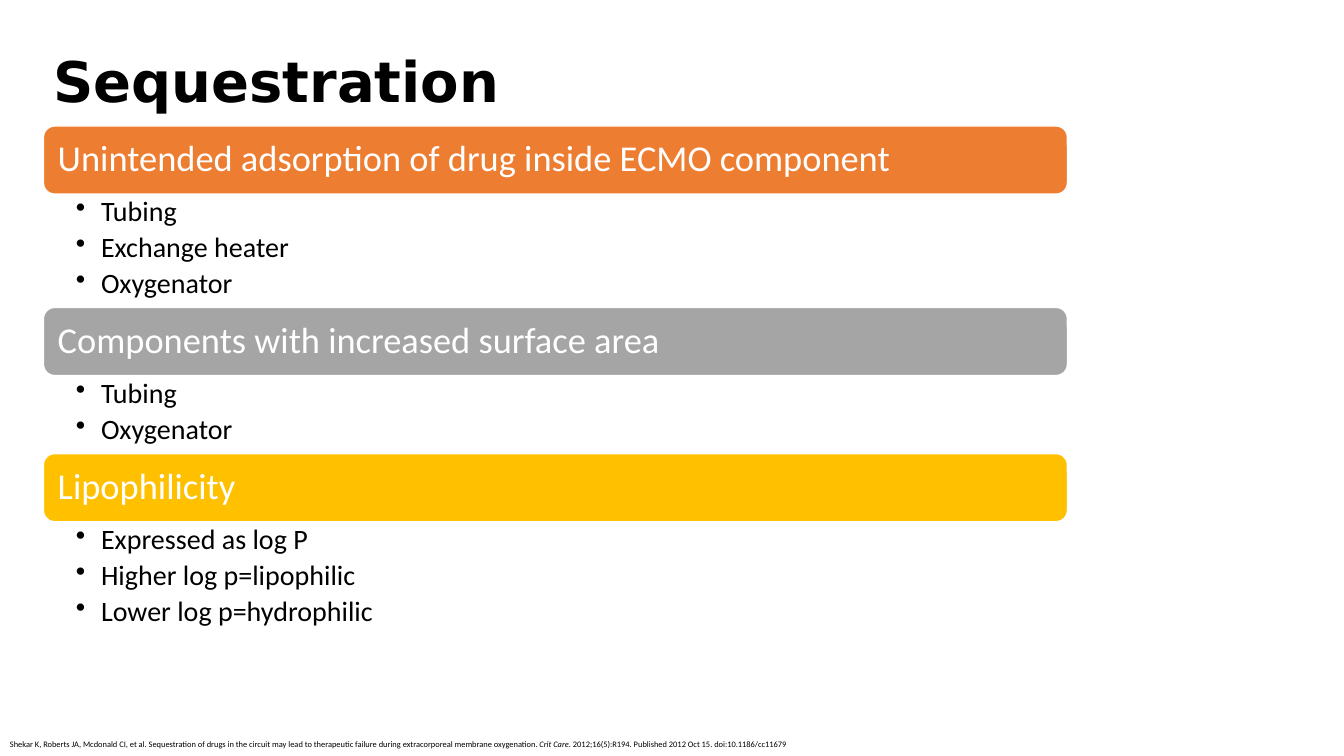
from lxml import etree
from pptx import Presentation
from pptx.dml.color import RGBColor
from pptx.enum import shapes, text
from pptx.oxml import ns
from pptx.util import Pt

BLACK = RGBColor(0x00, 0x00, 0x00)
WHITE = RGBColor(0xFF, 0xFF, 0xFF)
ORANGE = RGBColor(0xED, 0x7D, 0x31)
GRAY = RGBColor(0xA5, 0xA5, 0xA5)
GOLD = RGBColor(0xFF, 0xC0, 0x00)

LEFT, WIDTH = 31, 731.5
HEADING_HEIGHT = 48.7

# Heading, fill, height of the bullet area, bullets
SECTIONS = [
    ("Unintended adsorption of drug inside ECMO component", ORANGE, 80.9,
     ["Tubing", "Exchange heater", "Oxygenator"]),
    ("Components with increased surface area", GRAY, 55.7,
     ["Tubing", "Oxygenator"]),
    ("Lipophilicity", GOLD, 82.8,
     ["Expressed as log P", "Higher log p=lipophilic", "Lower log p=hydrophilic"]),
]


def set_font(paragraph, name, size, color):
    paragraph.font.name = name
    paragraph.font.size = Pt(size)
    paragraph.font.color.rgb = color


def set_frame(frame, left, vertical, anchor):
    """Wrap the text and set its insets and vertical anchor."""
    frame.word_wrap = True
    frame.margin_left = Pt(left)
    frame.margin_right = Pt(7.2)
    frame.margin_top = frame.margin_bottom = Pt(vertical)
    frame.vertical_anchor = anchor


presentation = Presentation()
presentation.slide_width, presentation.slide_height = Pt(960), Pt(540)
slide = presentation.slides.add_slide(presentation.slide_layouts[5])

title = slide.shapes.title
title.left, title.top, title.width, title.height = Pt(LEFT), Pt(34.5), Pt(510.5), Pt(51)
set_frame(title.text_frame, 7.2, 3.6, text.MSO_ANCHOR.MIDDLE)
title.text_frame.auto_size = text.MSO_AUTO_SIZE.NONE
title.text_frame.text = "Sequestration"
paragraph = title.text_frame.paragraphs[0]
paragraph.alignment = text.PP_ALIGN.LEFT
paragraph.line_spacing = 0.9
set_font(paragraph, "DejaVu Sans", 40, BLACK)
paragraph.font.bold = True

top = 90
for heading, color, body_height, bullets in SECTIONS:
    bar = slide.shapes.add_shape(shapes.MSO_SHAPE.ROUNDED_RECTANGLE,
                                 Pt(LEFT), Pt(top), Pt(WIDTH), Pt(HEADING_HEIGHT))
    bar.shadow.inherit = False
    bar.fill.solid()
    bar.fill.fore_color.rgb = color
    bar.line.color.rgb = WHITE
    bar.line.width = Pt(1)
    set_frame(bar.text_frame, 7.9, 7.9, text.MSO_ANCHOR.MIDDLE)
    bar.text_frame.text = heading
    paragraph = bar.text_frame.paragraphs[0]
    paragraph.alignment = text.PP_ALIGN.LEFT
    paragraph.line_spacing = 0.9
    set_font(paragraph, "Calibri", 26, WHITE)
    top += HEADING_HEIGHT

    body = slide.shapes.add_textbox(Pt(LEFT), Pt(top), Pt(WIDTH), Pt(body_height))
    set_frame(body.text_frame, 23.2, 2.6, text.MSO_ANCHOR.TOP)
    body.text_frame.text = "\n".join(bullets)
    for paragraph in body.text_frame.paragraphs:
        paragraph.level = 1
        properties = paragraph._p.get_or_add_pPr()
        properties.set("marL", str(Pt(18)))
        properties.set("indent", str(Pt(-18)))
        etree.SubElement(properties, ns.qn("a:buChar"), char="•")
        paragraph.line_spacing = 0.9
        paragraph.space_after = Pt(4)
        set_font(paragraph, "Calibri", 20, BLACK)
    top += body_height

citation = slide.shapes.add_textbox(Pt(0), Pt(524.2), Pt(661.7), Pt(14.4))
set_frame(citation.text_frame, 7.2, 3.6, text.MSO_ANCHOR.TOP)
paragraph = citation.text_frame.paragraphs[0]
set_font(paragraph, "Calibri", 6, BLACK)
paragraph.add_run().text = (
    "Shekar K, Roberts JA, Mcdonald CI, et al. Sequestration of drugs in the circuit may lead "
    "to therapeutic failure during extracorporeal membrane oxygenation. ")
journal = paragraph.add_run()
journal.text = "Crit Care"
journal.font.italic = True
paragraph.add_run().text = ". 2012;16(5):R194. Published 2012 Oct 15. doi:10.1186/cc11679"

presentation.save("out.pptx")
